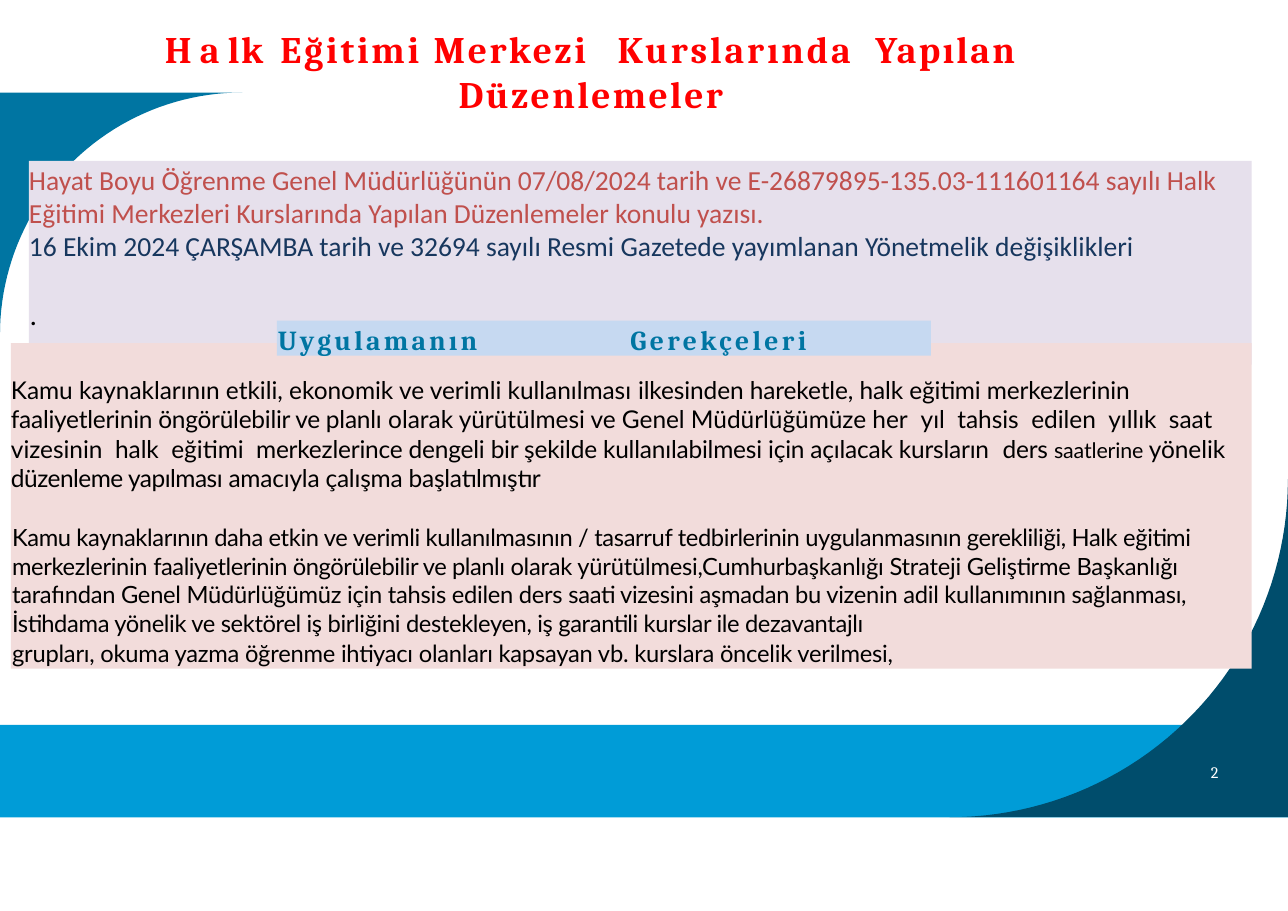
from math import cos, radians, sin

from lxml import etree
from pptx import Presentation
from pptx import util as u
from pptx.dml import color
from pptx.enum import shapes, text
from pptx.oxml import ns

Pt = u.Pt
COLORS = {
    "band": "009CD7", "dark": "004D6C", "teal": "0075A2", "red": "FF0000",
    "lavender": "E6E0EC", "pink": "F2DCDB", "sky": "C6D9F1", "brick": "C0504D",
    "navy": "17375E", "black": "000000", "white": "FFFFFF",
}


def paint(shape, fill):
    """Give a shape a plain fill without line or shadow."""
    shape.shadow.inherit = False
    shape.fill.solid()
    shape.fill.fore_color.rgb = color.RGBColor.from_string(COLORS[fill])
    shape.line.fill.background()


def add_panel(slide, left, top, width, height, fill=None, inset=1.4):
    """Add a rectangle, or a text box if no fill is given, and return its text frame."""
    bounds = [Pt(length) for length in (left, top, width, height)]
    if fill:
        panel = slide.shapes.add_shape(shapes.MSO_SHAPE.RECTANGLE, *bounds)
        paint(panel, fill)
    else:
        panel = slide.shapes.add_textbox(*bounds)
    frame = panel.text_frame
    frame.word_wrap = True
    frame.vertical_anchor = text.MSO_ANCHOR.TOP
    frame.margin_left = frame.margin_right = frame.margin_bottom = 0
    frame.margin_top = Pt(inset)
    return frame


def add_corner(slide, center_x, center_y, radius, side, fill):
    """Fill the area between a quarter circle and its square corner."""
    arc = [(center_x + side * radius * cos(radians(angle)),
            center_y + side * radius * sin(radians(angle)))
           for angle in range(0, 91, 2)]
    corner = (center_x + side * radius, center_y + side * radius)
    builder = slide.shapes.build_freeform(Pt(arc[0][0]), Pt(arc[0][1]))
    builder.add_line_segments([(Pt(x), Pt(y)) for x, y in arc[1:] + [corner]])
    paint(builder.convert_to_shape(), fill)


def write(frame, *pieces, size, font, ink, bold=False, before=0, indent=0,
          align=text.PP_ALIGN.LEFT, tabs=()):
    """Write one paragraph from (wording, letter spacing[, size]) pieces."""
    paragraph = frame.paragraphs[0]
    if paragraph.runs:
        paragraph = frame.add_paragraph()
    properties = paragraph._p.get_or_add_pPr()
    properties.set("marL", str(Pt(indent)))
    if tabs:
        stops = etree.SubElement(properties, ns.qn("a:tabLst"))
        for stop in tabs:
            etree.SubElement(stops, ns.qn("a:tab"), pos=str(Pt(stop)), algn="l")
    paragraph.alignment = align
    if before:
        paragraph.space_before = Pt(before)
    for wording, spacing, *own_size in pieces:
        run = paragraph.add_run()
        run.text = wording
        run.font.size = Pt(own_size[0] if own_size else size)
        run.font.name = font
        run.font.bold = bold
        run.font.color.rgb = color.RGBColor.from_string(COLORS[ink])
        run._r.get_or_add_rPr().set("spc", str(round(spacing * 100)))


def widen(wording, gap):
    """Split wording into pieces whose word gaps are widened."""
    return [piece for word in wording.split() for piece in ((word, 0), (" ", gap))]


def add_background(slide):
    """Draw the band and the two curved corners."""
    add_panel(slide, 0, 473.8, 841.68, 60.4, "band")
    add_corner(slide, 620.68, 313.2, 221, 1, "dark")
    add_corner(slide, 158.4, 218.9, 158.4, -1, "teal")


def add_title(slide):
    """Add the slide title."""
    title = add_panel(slide, 54, 14.4, 663.8, 60.5, inset=2.6)
    write(title, ("H a ", 0), ("lk\t", 1.1), ("Eğitimi ", 1.9), ("Merkezi\t", 1.7),
          ("Kurslarında\t", 1.9), ("Yapılan ", 1.5), ("Düzenlemeler", 1.6),
          size=24.5, font="Cambria", ink="red", bold=True, indent=0.7,
          align=text.PP_ALIGN.CENTER, tabs=(75.6, 295.9, 464.4))


def add_regulations(slide):
    """Add the panel naming the letter and the regulation."""
    regulations = add_panel(slide, 18.9, 105.1, 799, 133.2, "lavender")
    write(regulations,
          ("Hayat Boyu Öğrenme Genel Müdürlüğünün 07/08/2024 tarih ve "
           "E-26879895-135.03-111601164 sayılı Halk Eğitimi Merkezleri "
           "Kurslarında Yapılan Düzenlemeler konulu yazısı.", 0),
          size=18, font="Calibri", ink="brick")
    write(regulations,
          ("16 Ekim 2024 ÇARŞAMBA tarih ve 32694 sayılı Resmi Gazetede "
           "yayımlanan Yönetmelik değişiklikleri", 0),
          size=18, font="Calibri", ink="navy")
    write(regulations, (".", -0.1), size=18, font="Lato", ink="black",
          before=23.2, indent=0.7)


def add_reasons(slide):
    """Add the panel of reasons and its heading."""
    reasons = add_panel(slide, 7.2, 224.2, 810.7, 212.8, "pink", inset=20.9)
    write(reasons,
          ("Kamu kaynaklarının etkili, ekonomik ve verimli kullanılması ", 0),
          ("ilkesinden hareketle, halk eğitimi merkezlerinin ", -0.05),
          ("faaliyetlerinin öngörülebilir ve planlı ", -0.15),
          ("olarak yürütülmesi ve Genel Müdürlüğümüze ", 0),
          *widen("her yıl tahsis edilen yıllık saat vizesinin halk eğitimi", 4),
          ("merkezlerince dengeli bir şekilde kullanılabilmesi için açılacak "
           "kursların\tders ", -0.1),
          ("saatlerine ", -0.1, 14), ("yönelik ", 0),
          ("düzenleme yapılması ", -0.3), ("amacıyla çalışma başlatılmıştır", -0.1),
          size=16, font="Lato", ink="black")
    details = {"size": 15.5, "font": "Lato", "ink": "black", "indent": 0.7}
    write(reasons,
          ("Kamu kaynaklarının daha etkin ve verimli kullanılmasının / tasarruf "
           "tedbirlerinin uygulanmasının gerekliliği, Halk eğitimi merkezlerinin ",
           -0.22),
          ("faaliyetlerinin öngörülebilir ve planlı ", -0.28),
          ("olarak yürütülmesi,Cumhurbaşkanlığı Strateji Geliştirme Başkanlığı ", -0.13),
          ("tarafından Genel Müdürlüğümüz için tahsis edilen ders saati vizesini "
           "aşmadan bu vizenin adil kullanımının sağlanması,", -0.16),
          before=20.1, **details)
    write(reasons,
          ("İstihdama yönelik ve sektörel iş birliğini destekleyen, iş garantili "
           "kurslar ile dezavantajlı", -0.23), **details)
    write(reasons,
          ("grupları, okuma yazma öğrenme ihtiyacı olanları kapsayan vb. kurslara "
           "öncelik verilmesi,", -0.15), before=0.9, **details)

    heading = add_panel(slide, 180.9, 209.6, 427.5, 22.9, "sky", inset=1.8)
    write(heading, ("Uygulamanın\t", 2.1), ("Gerekçeleri", 2.2), size=18,
          font="Cambria", ink="teal", bold=True, indent=0.7, tabs=(230.4,))


def main():
    """Build and save the slide."""
    deck = Presentation()
    deck.slide_width, deck.slide_height = Pt(841.68), Pt(595.44)
    slide = deck.slides.add_slide(deck.slide_layouts[6])
    add_background(slide)
    add_title(slide)
    add_regulations(slide)
    page_number = add_panel(slide, 790.6, 496.8, 7.9, 14.4, inset=1.7)
    write(page_number, ("2", -0.5), size=10.5, font="Cambria", ink="white", indent=0.7)
    add_reasons(slide)
    deck.save("out.pptx")


if __name__ == "__main__":
    main()
